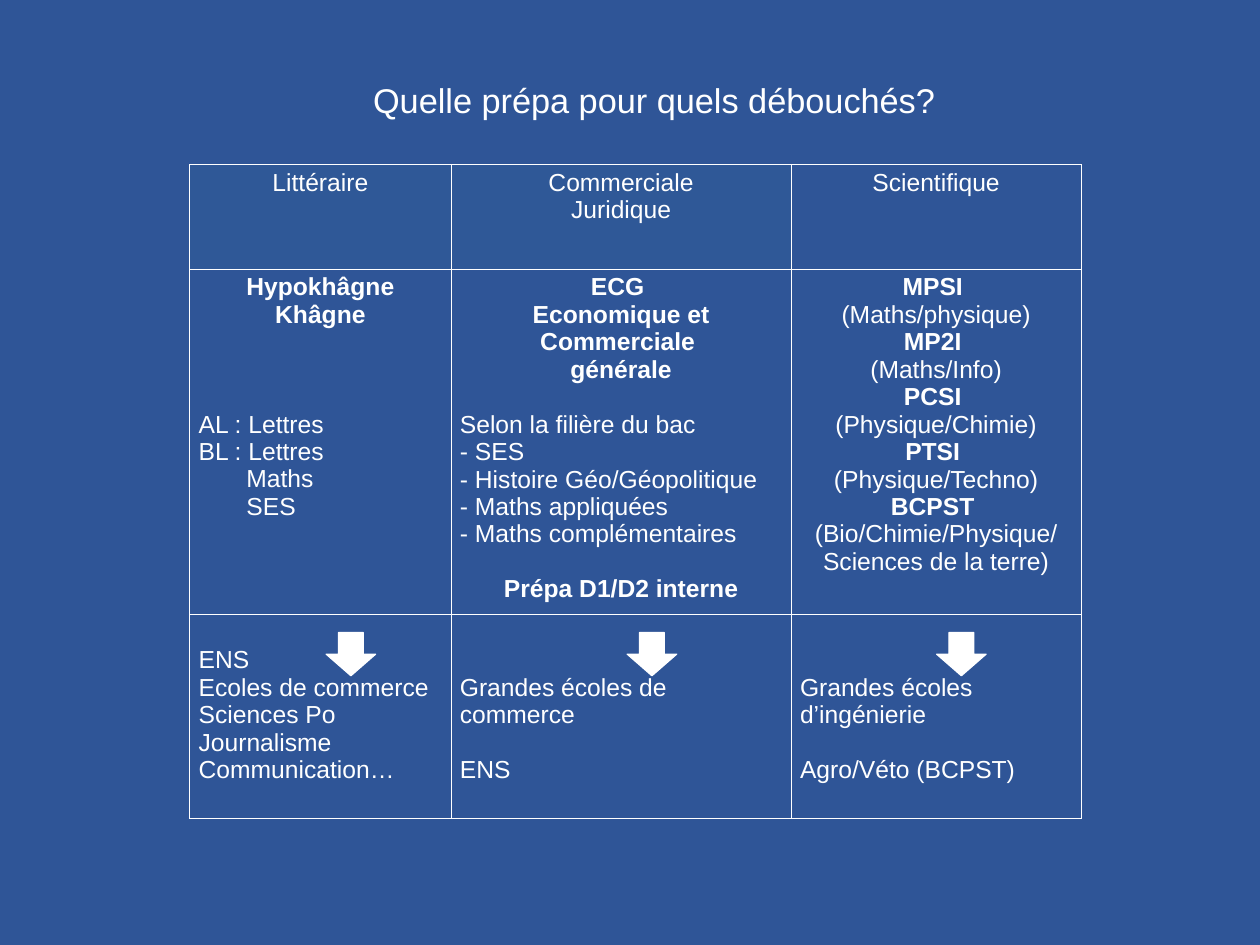
"""Build a slide comparing preparatory classes and the schools they lead to."""
from dataclasses import dataclass

from lxml import etree
from pptx import Presentation
from pptx.dml.color import RGBColor
from pptx.enum.shapes import MSO_SHAPE
from pptx.enum.text import MSO_ANCHOR, MSO_AUTO_SIZE, PP_ALIGN
from pptx.oxml.ns import qn
from pptx.util import Cm, Pt

LEFT, CENTER = PP_ALIGN.LEFT, PP_ALIGN.CENTER
MIDDLE = MSO_ANCHOR.MIDDLE
NO_AUTOFIT = MSO_AUTO_SIZE.NONE
DOWN_ARROW = MSO_SHAPE.DOWN_ARROW


@dataclass(frozen=True)
class Theme:
    font: str = "Arial"
    background: RGBColor = RGBColor(0x2F, 0x55, 0x97)
    heading_fill: RGBColor = RGBColor(0x2F, 0x58, 0x97)
    ink: RGBColor = RGBColor(0xFF, 0xFF, 0xFF)
    title_size: Pt = Pt(27.9)
    body_size: Pt = Pt(20)
    blank_line: Pt = Pt(22.3)
    rule: Pt = Pt(1)


@dataclass(frozen=True)
class Line:
    text: str
    align: PP_ALIGN = LEFT
    bold: bool = False
    gap: int = 0
    indent: Cm = Cm(0)


THEME = Theme()


def style_runs(paragraph, size, bold=False):
    for run in paragraph.runs:
        run.font.name = THEME.font
        run.font.size = size
        run.font.bold = bold
        run.font.color.rgb = THEME.ink


def add_borders(cell):
    properties = cell._tc.get_or_add_tcPr()
    for side in ("lnL", "lnR", "lnT", "lnB"):
        border = etree.SubElement(properties, qn(f"a:{side}"), w=str(int(THEME.rule)))
        ink = etree.SubElement(border, qn("a:solidFill"))
        etree.SubElement(ink, qn("a:srgbClr"), val=str(THEME.ink))


prs = Presentation()
prs.slide_width, prs.slide_height = Cm(36.12), Cm(27.1)
slide = prs.slides.add_slide(prs.slide_layouts[5])
slide.background.fill.solid()
slide.background.fill.fore_color.rgb = THEME.background

title = slide.shapes.title
title.left, title.top, title.width, title.height = Cm(1.55), Cm(2), Cm(34.4), Cm(1.7)
title.text_frame.text = "Quelle prépa pour quels débouchés?"
title.text_frame.auto_size = NO_AUTOFIT
title.text_frame.vertical_anchor = MIDDLE
title.text_frame.paragraphs[0].alignment = CENTER
style_runs(title.text_frame.paragraphs[0], THEME.title_size)

headings = [
    [Line("Littéraire", CENTER)],
    [Line("Commerciale", CENTER), Line("Juridique", CENTER)],
    [Line("Scientifique", CENTER)],
]
literary = [
    Line("Hypokhâgne", CENTER, True),
    Line("Khâgne", CENTER, True),
    Line("AL : Lettres", gap=3),
    Line("BL : Lettres"),
    Line("Maths", indent=Cm(1.37)),
    Line("SES", indent=Cm(1.37)),
]
business = [
    Line("ECG ", CENTER, True),
    Line("Economique et Commerciale ", CENTER, True),
    Line("générale", CENTER, True),
    Line("Selon la filière du bac", gap=1),
    Line("- SES"),
    Line("- Histoire Géo/Géopolitique"),
    Line("- Maths appliquées"),
    Line("- Maths complémentaires"),
    Line("Prépa D1/D2 interne", CENTER, True, gap=1),
]
science_tracks = [
    ("MPSI ", "(Maths/physique)"),
    ("MP2I ", "(Maths/Info)"),
    ("PCSI ", "(Physique/Chimie)"),
    ("PTSI ", "(Physique/Techno)"),
    ("BCPST ", "(Bio/Chimie/Physique/", "Sciences de la terre)"),
]
science = [
    Line(text, CENTER, bold=position == 0)
    for track in science_tracks
    for position, text in enumerate(track)
]
outlets = [
    [Line("ENS"), Line("Ecoles de commerce"), Line("Sciences Po"),
     Line("Journalisme"), Line("Communication…")],
    [Line("Grandes écoles de commerce"), Line("ENS ", gap=1)],
    [Line("Grandes écoles d’ingénierie"), Line("Agro/Véto (BCPST)", gap=1)],
]
rows = [headings, [literary, business, science], outlets]
column_widths = [Cm(7.49), Cm(9.75), Cm(8.31)]
row_heights = [Cm(3), Cm(9.91), Cm(5.84)]
outlet_margins = [Cm(0.91), Cm(1.7), Cm(1.7)]

prepa_table = slide.shapes.add_table(
    len(rows), len(column_widths), Cm(5.44), Cm(4.72),
    sum(column_widths), sum(row_heights)).table
prepa_table.first_row = prepa_table.horz_banding = False
for column, width in zip(prepa_table.columns, column_widths):
    column.width = width
for row, height in zip(prepa_table.rows, row_heights):
    row.height = height

for row_index, row_cells in enumerate(rows):
    for column_index, lines in enumerate(row_cells):
        cell = prepa_table.cell(row_index, column_index)
        add_borders(cell)
        cell.fill.solid()
        is_tinted = row_index == 0 and column_index < 2
        cell.fill.fore_color.rgb = THEME.heading_fill if is_tinted else THEME.background
        if row_cells is outlets:
            cell.margin_top = outlet_margins[column_index]
        cell.text_frame.text = "\n".join(line.text for line in lines)
        for paragraph, line in zip(cell.text_frame.paragraphs, lines):
            paragraph.alignment = line.align
            paragraph.space_before = Pt(line.gap * THEME.blank_line.pt)
            if line.indent:
                paragraph._p.get_or_add_pPr().set("marL", str(int(line.indent)))
            style_runs(paragraph, THEME.body_size, line.bold)

for arrow_left in (Cm(9.35), Cm(17.98), Cm(26.85)):
    arrow = slide.shapes.add_shape(DOWN_ARROW, arrow_left, Cm(18.14), Cm(1.42), Cm(1.24))
    arrow.shadow.inherit = False
    arrow.fill.solid()
    arrow.fill.fore_color.rgb = THEME.ink
    arrow.line.color.rgb = THEME.ink
    arrow.line.width = THEME.rule

prs.save("out.pptx")
